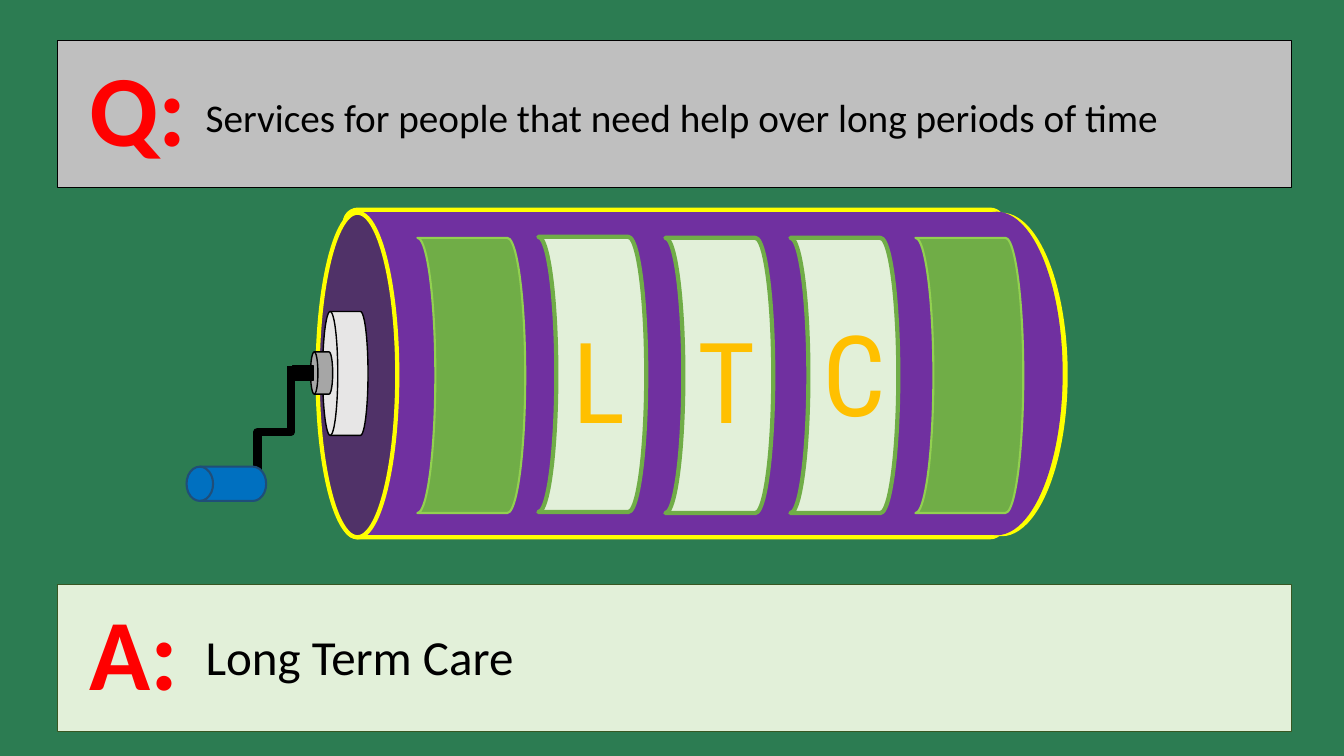
from lxml.etree import SubElement
from pptx import Presentation
from pptx.dml.color import RGBColor
from pptx.enum.shapes import MSO_CONNECTOR, MSO_SHAPE
from pptx.enum.text import MSO_ANCHOR, MSO_AUTO_SIZE, PP_ALIGN
from pptx.oxml.ns import qn
from pptx.util import Inches, Pt

COLORS = {
    "board": "2C7C52", "yellow": "FFFF00", "purple": "7030A0", "plum": "503268",
    "silver": "E7E6E6", "grey": "A6A6A6", "black": "000000", "green": "70AD47",
    "lime": "92D050", "mint": "E2F0D9", "blue": "0070C0", "navy": "1F4E79",
    "gold": "FFC000", "ash": "BFBFBF", "forest": "385723", "red": "FF0000",
    "crimson": "C00000",
}
WIDTH, HEIGHT = 13.33, 7.5
QUESTION = "Services for people that need help over long periods of time"
ANSWER = "Long Term Care"
PANELS = [("Q:", 0.4, "ash", "black"), ("A:", 5.8, "mint", "forest")]
PANEL_LEFT, PANEL_WIDTH, PANEL_HEIGHT = 0.57, 12.24, 1.46
LABEL_INDENT, TEXT_LEFT = 0.22, 1.94

DRUM = MSO_SHAPE.FLOWCHART_MAGNETIC_DISK
HUB = MSO_SHAPE.FLOWCHART_DIRECT_ACCESS_STORAGE
OVAL = MSO_SHAPE.OVAL
BARREL = [
    (OVAL, (9.28, 2.11, 1.31, 3.21), "yellow", None, 0),
    (MSO_SHAPE.ROUNDED_RECTANGLE, (3.42, 2.08, 6.53, 3.25), "purple", "yellow", 3),
    (OVAL, (3.15, 2.11, 0.79, 3.22), "plum", "yellow", 3),
    (HUB, (3.2, 3.09, 0.45, 1.23), "silver", "black", 1),
    (OVAL, (9.23, 2.1, 1.31, 3.21), "purple", None, 0),
    (HUB, (3.08, 3.49, 0.22, 0.42), "grey", "black", 1),
    (MSO_SHAPE.RECTANGLE, (2.9, 3.63, 0.21, 0.14), "black", "black", 1),
]
BAND_SIZE = (1.07, 2.73)
BANDS = [(4.14, 2.36, False), (5.34, 2.35, True), (6.6, 2.36, True),
         (7.84, 2.36, True), (9.08, 2.36, False)]
CRANK = (2.07, 4.12, 1.3, 0.33)
HANDLE = (HUB, (1.85, 4.63, 0.79, 0.34), "blue", "navy", 1.5)
LETTERS = [("L", 5.58, 3.04, 0.63), ("C", 8.06, 2.97, 0.82), ("T", 6.82, 3.04, 0.72)]
LETTER_HEIGHT = 1.45
MIRRORED = (HUB, MSO_SHAPE.FLOWCHART_STORED_DATA)


def color(name):
    return RGBColor.from_string(COLORS[name])


def inches(box):
    return [Inches(length) for length in box]


def add_part(shapes, kind, box, fill, line, weight):
    part = shapes.add_shape(kind, *inches(box))
    part.shadow.inherit = False
    part.fill.solid()
    part.fill.fore_color.rgb = color(fill)
    if line:
        part.line.color.rgb = color(line)
        part.line.width = Pt(weight)
    else:
        part.line.fill.background()
    if kind in MIRRORED:
        part.element.spPr.find(qn("a:xfrm")).set("flipH", "1")
    return part


def write(holder, text, size, ink="black", font="Calibri", bold=False,
          align=PP_ALIGN.LEFT, wrap=True, outline=None):
    frame = holder.text_frame
    frame.word_wrap = wrap
    frame.auto_size = MSO_AUTO_SIZE.SHAPE_TO_FIT_TEXT
    frame.vertical_anchor = MSO_ANCHOR.TOP
    paragraph = frame.paragraphs[0]
    paragraph.alignment = align
    paragraph.line_spacing = 1.0
    paragraph.space_before = Pt(0)
    run = paragraph.add_run()
    run.text = text
    run.font.size, run.font.name, run.font.bold = Pt(size), font, bold
    run.font.color.rgb = color(ink)
    if outline:
        edge, weight = outline
        properties = run.font._element
        stroke = SubElement(properties, qn("a:ln"), w=str(Pt(weight)))
        solid = SubElement(stroke, qn("a:solidFill"))
        SubElement(solid, qn("a:srgbClr"), val=COLORS[edge])
        properties.insert(0, stroke)


def add_crank(shapes):
    left, top, width, height = CRANK
    crank = shapes.add_connector(
        MSO_CONNECTOR.ELBOW, *inches((left, top, left + width, top + height)))
    crank.line.color.rgb = color("black")
    crank.line.width = Pt(6)
    properties = crank.element.spPr
    properties.find(qn("a:xfrm")).set("rot", str(90 * 60000))
    SubElement(properties, qn("a:effectLst"))


def add_panel(shapes, label, top, fill, line):
    panel = shapes.add_group_shape().shapes
    add_part(panel, MSO_SHAPE.RECTANGLE,
             (PANEL_LEFT, top, PANEL_WIDTH, PANEL_HEIGHT), fill, line, 1)
    caption = panel.add_textbox(*inches((PANEL_LEFT + LABEL_INDENT, top, 1.46, 1.31)))
    write(caption, label, 72, ink="red", bold=True, outline=("crimson", 2))


def main():
    deck = Presentation()
    deck.slide_width, deck.slide_height = Inches(WIDTH), Inches(HEIGHT)
    slide = deck.slides.add_slide(deck.slide_layouts[5])
    slide.background.fill.solid()
    slide.background.fill.fore_color.rgb = color("board")
    shapes = slide.shapes

    parts = [add_part(shapes, *part) for part in BARREL]
    parts[1].adjustments[0] = 0.04
    for left, top, lettered in BANDS:
        fill, line, weight = ("mint", "green", 3) if lettered else ("green", "lime", 1.5)
        add_part(shapes, MSO_SHAPE.FLOWCHART_STORED_DATA,
                 (left, top, *BAND_SIZE), fill, line, weight)
    add_crank(shapes)
    add_part(shapes, *HANDLE)
    for letter, left, top, width in LETTERS:
        tile = shapes.add_textbox(*inches((left, top, width, LETTER_HEIGHT)))
        write(tile, letter, 80, ink="gold", font="Roboto Condensed",
              wrap=False, outline=("yellow", 0.75))
    for panel in PANELS:
        add_panel(shapes, *panel)

    question = shapes.title
    question.left, question.top, question.width, question.height = inches(
        (TEXT_LEFT, 0.88, 10.68, 0.57))
    write(question, QUESTION, 28)
    question.element.getparent().append(question.element)
    answer = shapes.add_textbox(*inches((TEXT_LEFT, 6.17, 6.54, 0.69)))
    write(answer, ANSWER, 35, align=PP_ALIGN.JUSTIFY)
    deck.save("out.pptx")


if __name__ == "__main__":
    main()
